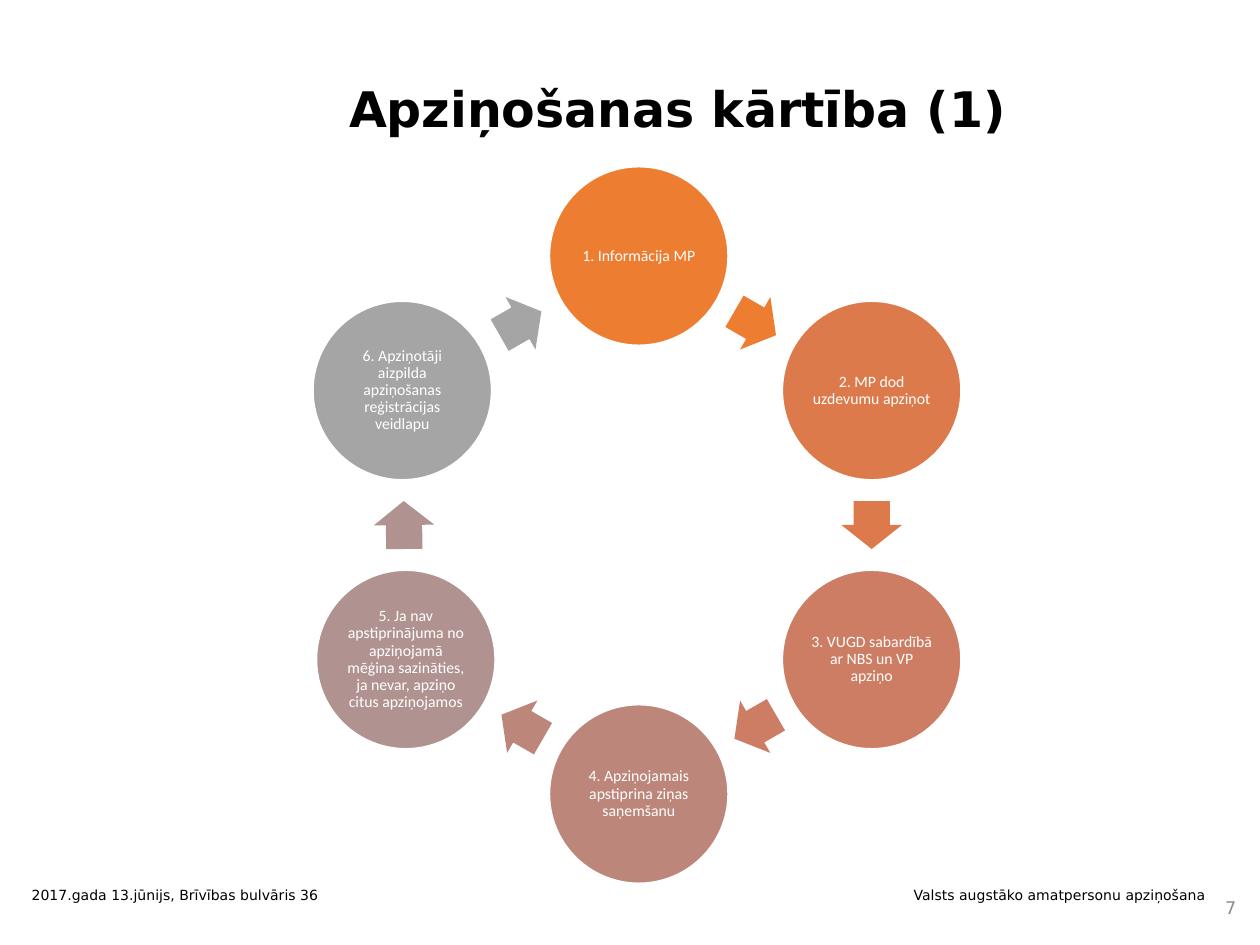
from dataclasses import dataclass
from math import atan2, cos, degrees, radians, sin

from lxml import etree
from pptx import Presentation
from pptx.dml.color import RGBColor
from pptx.enum.shapes import MSO_SHAPE
from pptx.enum.text import MSO_ANCHOR, PP_ALIGN
from pptx.oxml.ns import qn
from pptx.util import Pt

OVAL, ARROW = MSO_SHAPE.OVAL, MSO_SHAPE.RIGHT_ARROW
CENTER, LEFT, RIGHT = PP_ALIGN.CENTER, PP_ALIGN.LEFT, PP_ALIGN.RIGHT
MIDDLE, TOP = MSO_ANCHOR.MIDDLE, MSO_ANCHOR.TOP

COLORS = {
    "text": "000000",
    "number": "8C8C8C",
    "white": "FFFFFF",
    "step1": "ED7D31",
    "step2": "DC7A4B",
    "step3": "CC7D64",
    "step4": "BD867B",
    "step5": "B09391",
    "step6": "A5A5A5",
}
MAIN_FONT, STEP_FONT = "DejaVu Sans", "Calibri"

CYCLE_X, CYCLE_Y, CYCLE_RADIUS = 365, 300, 153.7
CIRCLE_SIZE = 102.2
ARROW_LENGTH, ARROW_WIDTH = 27.4, 34.6
STEP_INSET = 0.72


@dataclass
class Step:
    label: str
    color: str
    shift_x: float = 0


STEPS = [
    Step("1. Informācija MP", "step1"),
    Step("2. MP dod uzdevumu apziņot", "step2"),
    Step("3. VUGD sabardībā ar NBS un VP apziņo", "step3"),
    Step("4. Apziņojamais apstiprina ziņas saņemšanu", "step4"),
    Step("5. Ja nav apstiprinājuma no apziņojamā mēģina sazināties, "
         "ja nevar, apziņo citus apziņojamos", "step5"),
    Step("6. Apziņotāji aizpilda apziņošanas reģistrācijas veidlapu",
         "step6", shift_x=-2),
]


def rgb(name: str) -> RGBColor:
    return RGBColor.from_string(COLORS[name])


def write(shape, text: str, size: float, color: str, font: str = MAIN_FONT,
          align=CENTER, anchor=MIDDLE, spacing: float = 0.9, bold: bool = False):
    """Fill a shape with one formatted paragraph and return the paragraph."""
    frame = shape.text_frame
    frame.text = text
    frame.word_wrap = True
    frame.vertical_anchor = anchor
    paragraph = frame.paragraphs[0]
    paragraph.alignment = align
    paragraph.line_spacing = spacing
    for run in paragraph.runs:
        run.font.name = font
        run.font.size = Pt(size)
        run.font.bold = bold
        run.font.color.rgb = rgb(color)
    return paragraph


def add_centered(slide, preset, x: float, y: float, width: float,
                 height: float, color: str):
    shape = slide.shapes.add_shape(preset, Pt(x - width / 2), Pt(y - height / 2),
                                   Pt(width), Pt(height))
    shape.shadow.inherit = False
    shape.fill.solid()
    shape.fill.fore_color.rgb = rgb(color)
    return shape


def step_center(index: int) -> tuple[float, float]:
    """Centre of a step on the ring, clockwise from the top."""
    position = index % len(STEPS)
    angle = radians(position * 360 / len(STEPS) - 90)
    return (CYCLE_X + CYCLE_RADIUS * cos(angle) + STEPS[position].shift_x,
            CYCLE_Y + CYCLE_RADIUS * sin(angle))


def add_step(slide, index: int) -> None:
    step = STEPS[index]
    circle = add_centered(slide, OVAL, *step_center(index),
                          CIRCLE_SIZE, CIRCLE_SIZE, step.color)
    circle.line.color.rgb = rgb("white")
    circle.line.width = Pt(1)
    frame = circle.text_frame
    frame.margin_left = frame.margin_right = Pt(STEP_INSET)
    frame.margin_top = frame.margin_bottom = Pt(STEP_INSET)
    write(circle, step.label, 9, "white", STEP_FONT)


def add_step_arrow(slide, index: int) -> None:
    """Draw the arrow halfway between a step and the next one."""
    x1, y1 = step_center(index)
    x2, y2 = step_center(index + 1)
    arrow = add_centered(slide, ARROW, (x1 + x2) / 2, (y1 + y2) / 2,
                         ARROW_LENGTH, ARROW_WIDTH, STEPS[index].color)
    arrow.adjustments[0] = 0.6
    arrow.adjustments[1] = 0.5
    arrow.line.fill.background()
    arrow.rotation = degrees(atan2(y2 - y1, x2 - x1)) % 360


def add_footer(slide) -> None:
    footer = slide.shapes.add_textbox(Pt(11), Pt(505.5), Pt(686), Pt(21))
    paragraph = write(
        footer,
        "2017.gada 13.jūnijs, Brīvības bulvāris 36\tValsts augstāko amatpersonu apziņošana",
        8, "text", align=LEFT, anchor=TOP, spacing=0.7)
    properties = paragraph._p.get_or_add_pPr()
    tabs = etree.SubElement(properties, qn("a:tabLst"))
    etree.SubElement(tabs, qn("a:tab"), pos=str(Pt(671)), algn="r")


def main() -> None:
    deck = Presentation()
    deck.slide_width, deck.slide_height = Pt(720), Pt(540)
    slide = deck.slides.add_slide(deck.slide_layouts[5])

    title = slide.shapes.title
    title.left, title.top, title.width, title.height = Pt(187), Pt(29), Pt(400), Pt(70)
    write(title, "Apziņošanas kārtība (1)", 28, "text", bold=True)

    number = slide.shapes.add_textbox(Pt(510.5), Pt(509), Pt(203), Pt(19.5))
    write(number, "7", 10, "number", align=RIGHT, spacing=1.0)

    for index in range(len(STEPS)):
        add_step(slide, index)
        add_step_arrow(slide, index)
    add_footer(slide)
    deck.save("out.pptx")


if __name__ == "__main__":
    main()
